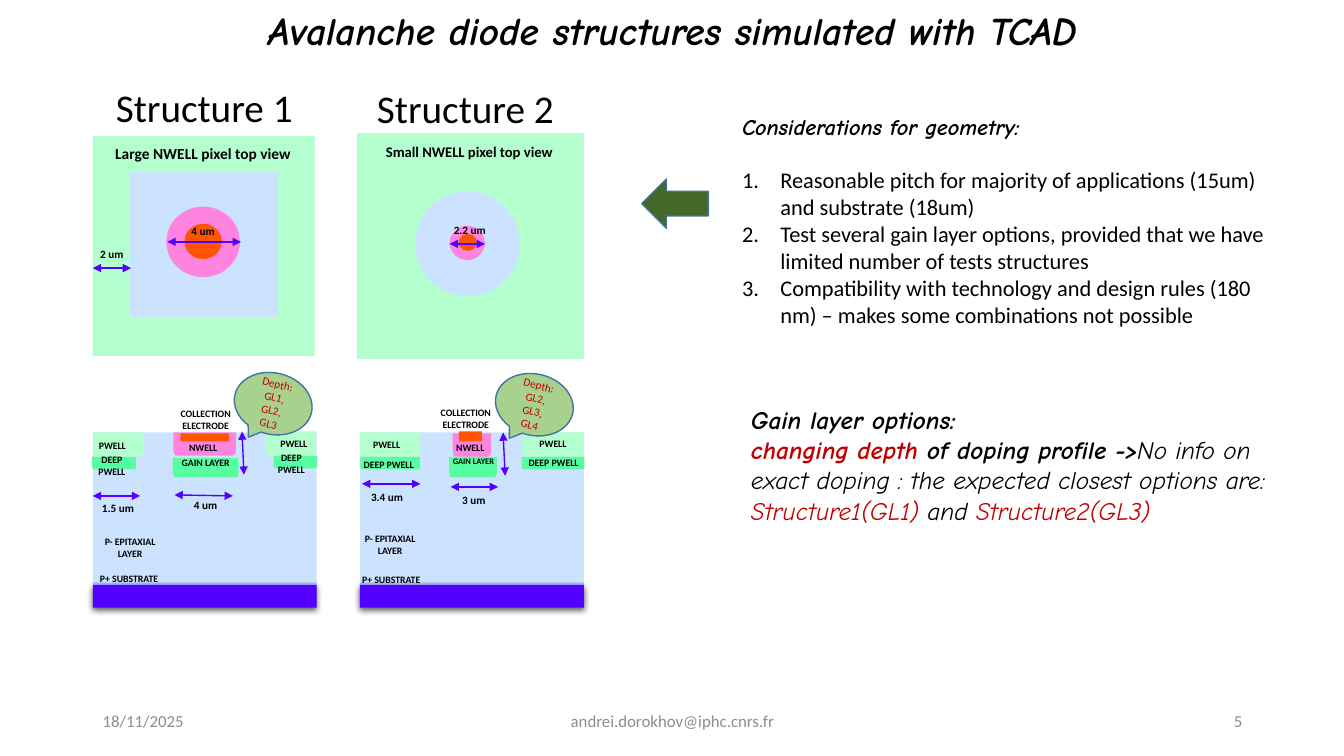
from dataclasses import dataclass

from lxml.etree import SubElement
from pptx import Presentation
from pptx.dml.color import RGBColor
from pptx.enum.shapes import MSO_CONNECTOR as Connector, MSO_SHAPE as Shape
from pptx.enum.text import MSO_ANCHOR as Anchor, MSO_AUTO_SIZE as AutoSize, PP_ALIGN as Align
from pptx.oxml.ns import qn
from pptx.util import Emu, Pt

PX = 9144
MINT, SKY, PINK, ORANGE = "B3FFCE", "CBE3FF", "FF84E0", "FF5500"
GREEN, GREEN_EDGE, VIOLET, LILAC = "56FFA1", "5EFA9C", "5300FF", "A5ACFC"
BLACK, RED, GREY, EDGE = "000000", "C00000", "8C8C8C", "43739E"
BODY_FONT, HAND_FONT = "Calibri", "Comic Neue"
RECT, OVAL, WELL = Shape.RECTANGLE, Shape.OVAL, Shape.ROUND_2_SAME_RECTANGLE


@dataclass
class Block:
    kind: int
    x: int
    y: int
    w: int
    h: int
    fill: str
    edge: str = ""
    rotation: float = 0
    shadow: bool = False


@dataclass
class Label:
    text: str
    x: int
    y: int
    w: int
    h: int
    size: float = 7
    bold: bool = True
    colour: str = BLACK
    align: int = Align.CENTER
    anchor: int = Anchor.TOP
    wrap: bool = True


@dataclass
class Arrow:
    x1: int
    y1: int
    x2: int
    y2: int


@dataclass
class Piece:
    text: str
    size: float
    font: str = BODY_FONT
    colour: str = BLACK
    bold: bool = False
    italic: bool = False


def px(value: int) -> Emu:
    return Emu(value * PX)


def rgb(colour: str) -> RGBColor:
    return RGBColor.from_string(colour)


def add_pieces(para, *pieces: Piece) -> None:
    for piece in pieces:
        span = para.add_run()
        span.text = piece.text
        font = span.font
        font.name, font.size = piece.font, Pt(piece.size)
        font.bold, font.italic = piece.bold, piece.italic
        font.color.rgb = rgb(piece.colour)


def add_block(page, block: Block):
    shape = page.shapes.add_shape(block.kind, *map(px, (block.x, block.y, block.w, block.h)))
    shape.rotation = block.rotation
    shape.fill.solid()
    shape.fill.fore_color.rgb = rgb(block.fill)
    if block.edge:
        shape.line.color.rgb = rgb(block.edge)
        shape.line.width = Pt(1)
    else:
        shape.line.fill.background()
    shape.shadow.inherit = False
    if block.shadow:
        effects = shape._element.spPr.find(qn("a:effectLst"))
        outer = SubElement(effects, qn("a:outerShdw"), blurRad=str(Pt(4.5)),
                           dist=str(Pt(1.5)), dir="5400000", rotWithShape="0")
        tint = SubElement(outer, qn("a:srgbClr"), val=BLACK)
        SubElement(tint, qn("a:alpha"), val="63000")
    return shape


def add_label(page, label: Label) -> None:
    box = page.shapes.add_textbox(*map(px, (label.x, label.y, label.w, label.h)))
    frame = box.text_frame
    frame.word_wrap = label.wrap
    frame.vertical_anchor = label.anchor
    para = frame.paragraphs[0]
    para.alignment = label.align
    add_pieces(para, Piece(label.text, label.size, colour=label.colour, bold=label.bold))


def add_arrow(page, arrow: Arrow) -> None:
    line = page.shapes.add_connector(
        Connector.STRAIGHT, *map(px, (arrow.x1, arrow.y1, arrow.x2, arrow.y2)))
    line.line.color.rgb = rgb(VIOLET)
    line.line.width = Pt(1)
    for end in ("a:headEnd", "a:tailEnd"):
        SubElement(line.line._get_or_add_ln(), qn(end), type="triangle")
    SubElement(line._element.spPr, qn("a:effectLst"))


def add_callout(page, x: int, y: int, layers: str) -> None:
    shape = add_block(page, Block(Shape.OVAL_CALLOUT, x, y, 78, 61, "A9D18E", EDGE, 13.5))
    frame = shape.text_frame
    frame.word_wrap = True
    frame.vertical_anchor = Anchor.MIDDLE
    for para, text in zip((frame.paragraphs[0], frame.add_paragraph()), ("Depth:", layers)):
        para.alignment = Align.CENTER
        add_pieces(para, Piece(text, 8, colour=RED))


def place(holder, x: int, y: int, w: int, h: int, anchor: int):
    holder.left, holder.top, holder.width, holder.height = map(px, (x, y, w, h))
    frame = holder.text_frame
    frame.word_wrap = True
    frame.auto_size = AutoSize.NONE
    frame.vertical_anchor = anchor
    return frame


def well(x: int, y: int, w: int, h: int, fill: str) -> Block:
    return Block(WELL, x, y, w, h, fill, GREEN_EDGE if fill == GREEN else "", 180)


def section(x: int) -> list[Block]:
    return [Block(RECT, x, 429, 222, 168, SKY),
            Block(RECT, x, 580, 222, 23, VIOLET, shadow=True),
            Block(RECT, x, 578, 222, 2, LILAC)]


def add_list(page, items: list[str]) -> None:
    frame = place(page.placeholders[1], 726, 107, 540, 226, Anchor.TOP)
    heading = frame.paragraphs[0]
    props = heading._p.get_or_add_pPr()
    props.set("marL", "0")
    props.set("indent", "0")
    SubElement(props, qn("a:buNone"))
    heading.space_before = Pt(0)
    add_pieces(heading, Piece("Considerations for geometry:", 16, HAND_FONT, bold=True, italic=True))
    for index, item in enumerate(items):
        para = frame.add_paragraph()
        props = para._p.get_or_add_pPr()
        props.set("marL", str(px(38)))
        props.set("indent", str(px(-38)))
        SubElement(props, qn("a:buFont"), typeface="+mj-lt")
        SubElement(props, qn("a:buAutoNum"), type="arabicPeriod")
        para.space_before = Pt(0 if index else 19)
        add_pieces(para, Piece(item, 16))


BLOCKS = [
    Block(RECT, 92, 135, 220, 218, MINT), Block(RECT, 129, 170, 147, 145, SKY),
    Block(OVAL, 165, 205, 73, 70, PINK), Block(OVAL, 183, 222, 37, 35, ORANGE),
    Block(RECT, 354, 132, 225, 224, MINT), Block(OVAL, 412, 190, 104, 104, SKY),
    Block(OVAL, 446, 224, 35, 34, PINK), Block(OVAL, 455, 232, 18, 17, ORANGE),
    *section(92),
    well(92, 429, 51, 24, MINT), well(263, 428, 50, 24, MINT),
    well(272, 453, 42, 11, GREEN), well(92, 454, 42, 11, GREEN),
    well(172, 429, 62, 23, PINK), well(172, 455, 64, 18, GREEN), well(179, 430, 48, 8, ORANGE),
    *section(357),
    well(357, 429, 60, 24, MINT), well(518, 429, 61, 24, MINT),
    well(518, 454, 61, 11, GREEN), well(358, 454, 58, 11, GREEN),
    well(449, 430, 38, 23, PINK), well(446, 454, 46, 19, GREEN), well(455, 428, 23, 10, ORANGE),
    Block(Shape.DOWN_ARROW, 645, 169, 49, 66, "43682A", EDGE, 90),
]
LABELS = [
    Label("Large NWELL pixel top view", 103, 138, 197, 29, 11),
    Label("Small NWELL pixel top view", 369, 137, 193, 28, 10.5),
    Label("2 um", 84, 240, 54, 23, 8), Label("4 um", 103, 218, 197, 16, 8),
    Label("2.2 um", 437, 217, 58, 24, 8),
    Label("DEEP PWELL", 78, 445, 66, 21), Label("DEEP PWELL", 258, 443, 62, 34),
    Label("PWELL", 86, 431, 51, 21), Label("PWELL", 266, 429, 51, 21),
    Label("COLLECTION ELECTRODE", 152, 400, 104, 34), Label("NWELL", 176, 433, 51, 22),
    Label("GAIN LAYER", 159, 448, 90, 22), Label("P- EPITAXIAL LAYER", 85, 527, 88, 21),
    Label("P+ SUBSTRATE", 74, 563, 108, 22),
    Label("1.5 um", 90, 492, 54, 21, 8), Label("4 um", 180, 489, 48, 24, 8),
    Label("DEEP PWELL", 348, 450, 75, 22), Label("DEEP PWELL", 508, 448, 82, 22),
    Label("PWELL", 358, 430, 51, 21), Label("PWELL", 517, 429, 63, 22),
    Label("COLLECTION ELECTRODE", 410, 399, 104, 34), Label("NWELL", 441, 433, 51, 22),
    Label("GAIN LAYER", 435, 448, 69, 20, 6), Label("P- EPITAXIAL LAYER", 343, 524, 88, 21),
    Label("P+ SUBSTRATE", 334, 564, 108, 22),
    Label("3.4 um", 357, 482, 54, 24, 8), Label("3 um", 446, 484, 48, 24, 8),
    Label("Structure 1", 105, 78, 198, 57, 28, False, align=Align.LEFT, wrap=False),
    Label("Structure 2", 364, 79, 198, 57, 28, False, align=Align.LEFT, wrap=False),
    Label("18/11/2025", 92, 695, 300, 40, 12, False, GREY, Align.LEFT, Anchor.MIDDLE),
    Label("andrei.dorokhov@iphc.cnrs.fr", 442, 695, 450, 40, 12, False, GREY, anchor=Anchor.MIDDLE),
    Label("5", 942, 695, 300, 40, 12, False, GREY, Align.RIGHT, Anchor.MIDDLE),
]
ARROWS = [
    Arrow(92, 266, 130, 266), Arrow(166, 240, 239, 240), Arrow(446, 242, 481, 242),
    Arrow(92, 492, 139, 492), Arrow(173, 491, 231, 492), Arrow(240, 428, 242, 471),
    Arrow(359, 480, 417, 480), Arrow(447, 483, 494, 483), Arrow(499, 429, 501, 472),
]
CONSIDERATIONS = [
    "Reasonable pitch for majority of applications (15um) and substrate (18um)",
    "Test several gain layer options, provided that we have limited number of tests structures",
    "Compatibility with technology and design rules (180 nm) – makes some combinations not possible",
]
GAIN_OPTIONS = [
    [("Gain layer options:", BLACK, True)],
    [("changing depth ", RED, True), ("of doping profile ->", BLACK, True),
     ("No info on exact doping : the expected closest options are: ", BLACK, False),
     ("Structure1(GL1)", RED, False), (" and ", BLACK, False), ("Structure2(GL3)", RED, False)],
]


def main() -> None:
    deck = Presentation()
    deck.slide_width, deck.slide_height = px(1333), px(750)
    page = deck.slides.add_slide(deck.slide_layouts[1])
    title = place(page.shapes.title, 68, 8, 1198, 49, Anchor.MIDDLE).paragraphs[0]
    title.alignment, title.line_spacing = Align.CENTER, 0.9
    add_pieces(title, Piece("Avalanche diode structures simulated with TCAD", 28, HAND_FONT,
                            bold=True, italic=True))
    add_list(page, CONSIDERATIONS)
    for block in BLOCKS:
        add_block(page, block)
    for label in LABELS:
        add_label(page, label)
    for arrow in ARROWS:
        add_arrow(page, arrow)
    add_callout(page, 232, 370, "GL1, GL2, GL3")
    add_callout(page, 491, 371, "GL2, GL3, GL4")
    frame = page.shapes.add_textbox(*map(px, (735, 396, 536, 188))).text_frame
    frame.word_wrap = True
    for para, pieces in zip((frame.paragraphs[0], frame.add_paragraph()), GAIN_OPTIONS):
        add_pieces(para, *(Piece(text, 18, HAND_FONT, colour, bold, True)
                           for text, colour, bold in pieces))
    deck.save("out.pptx")


if __name__ == "__main__":
    main()
